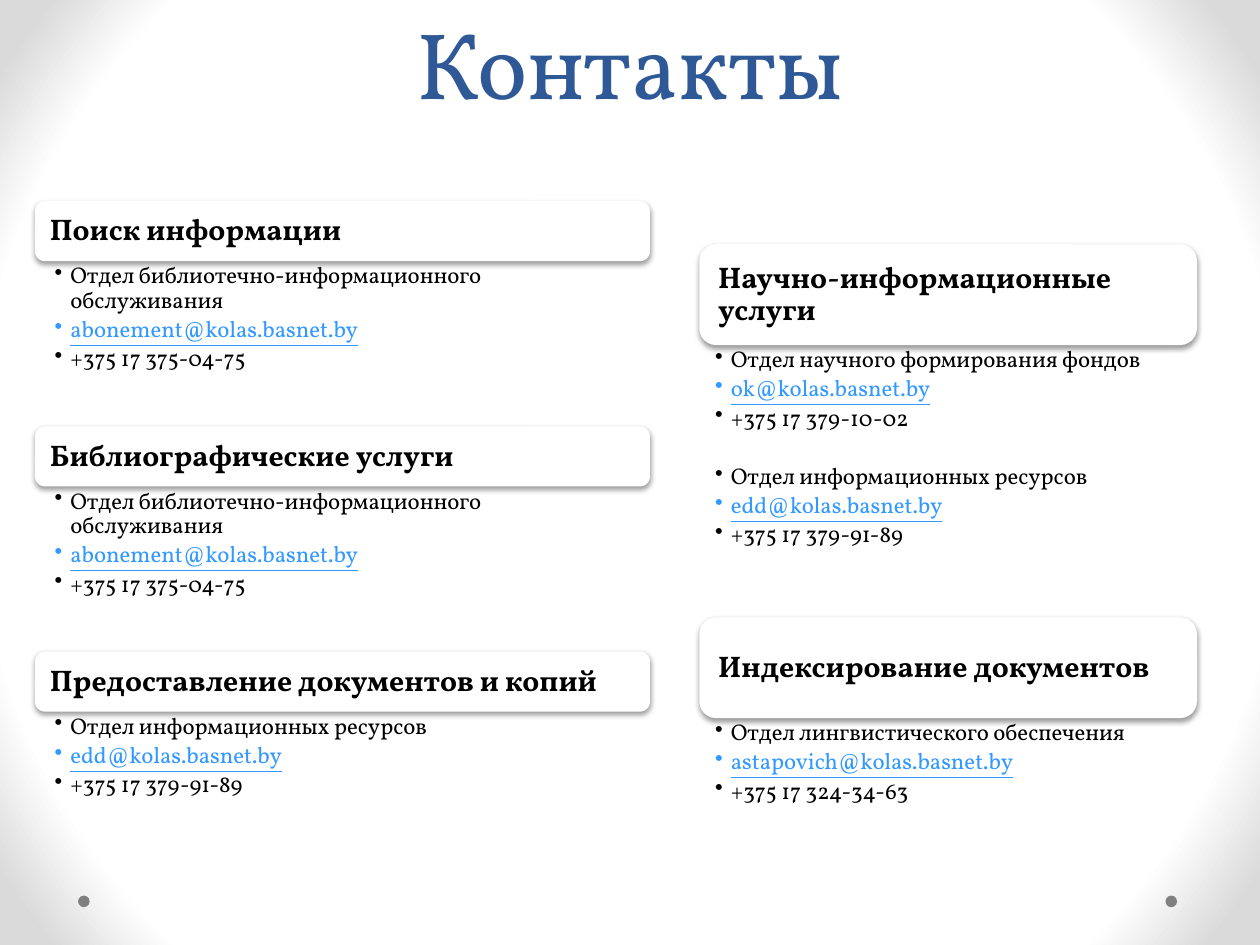
from lxml.etree import SubElement
from pptx import Presentation
from pptx.dml.color import RGBColor
from pptx.enum.shapes import MSO_SHAPE
from pptx.enum.text import MSO_ANCHOR, PP_ALIGN
from pptx.oxml import parse_xml
from pptx.oxml.ns import nsdecls, qn
from pptx.util import Pt

# Content: heading, then departments as (name, e-mail, phone)
TITLE = "Контакты"
LENDING = ("Отдел библиотечно-информационного обслуживания",
           "abonement@kolas.basnet.by", "+375 17 375-04-75")
RESOURCES = ("Отдел информационных ресурсов",
             "edd@kolas.basnet.by", "+375 17 379-91-89")
COLLECTIONS = ("Отдел научного формирования фондов",
               "ok@kolas.basnet.by", "+375 17 379-10-02")
LINGUISTICS = ("Отдел лингвистического обеспечения",
               "astapovich@kolas.basnet.by", "+375 17 324-34-63")

# Columns, lengths in points; each service has its list height
COLUMNS = [
    {"left": 20, "top": 115, "width": 351.4, "heading_height": 34.3,
     "heading_inset": 6.8, "list_inset": 11.2,
     "services": [("Поиск информации", [LENDING], 94.4),
                  ("Библиографические услуги", [LENDING], 94.4),
                  ("Предоставление документов и копий", [RESOURCES], 58)]},
    {"left": 399.6, "top": 139.6, "width": 284.4, "heading_height": 57.6,
     "heading_inset": 8, "list_inset": 9,
     "services": [("Научно-информационные услуги", [COLLECTIONS, RESOURCES], 155.6),
                  ("Индексирование документов", [LINGUISTICS], 58)]},
]

FONT = "Vollkorn"
NAVY = RGBColor(0x2F, 0x58, 0x97)
BLACK = RGBColor(0, 0, 0)
WHITE = RGBColor(0xFF, 0xFF, 0xFF)
LINK_BLUE = RGBColor(0x33, 0x99, 0xFF)
GRAY = RGBColor(0x80, 0x80, 0x80)
BACKGROUND_STOPS = [(69, "FFFFFF"), (83, "FFFFFF"), (95, "DADADA")]
DEPARTMENT_GAP = 16.7
INDENT = 9


def set_insets(frame, left, top, right, bottom):
    frame.margin_left, frame.margin_top = Pt(left), Pt(top)
    frame.margin_right, frame.margin_bottom = Pt(right), Pt(bottom)
    frame.word_wrap = True


def format_run(run, size, color, bold=False, underline=False):
    run.font.name = FONT
    run.font.size = Pt(size)
    run.font.color.rgb = color
    run.font.bold = bold
    run.font.underline = underline


def add_background(slide):
    stops = "".join(f'<a:gs pos="{pos * 1000}"><a:srgbClr val="{color}"/></a:gs>'
                    for pos, color in BACKGROUND_STOPS)
    slide.element.cSld.insert(0, parse_xml(
        f'<p:bg {nsdecls("p", "a")}><p:bgPr><a:gradFill rotWithShape="1">'
        f'<a:gsLst>{stops}</a:gsLst><a:path path="circle">'
        '<a:fillToRect l="50000" t="50000" r="50000" b="50000"/></a:path>'
        '</a:gradFill><a:effectLst/></p:bgPr></p:bg>'))


def add_plain_shape(slide, kind, left, top, width, height, color):
    shape = slide.shapes.add_shape(kind, Pt(left), Pt(top), Pt(width), Pt(height))
    shape.shadow.inherit = False
    shape.fill.solid()
    shape.fill.fore_color.rgb = color
    shape.line.fill.background()
    return shape


def add_heading(slide, text, left, top, width, height, inset):
    card = add_plain_shape(slide, MSO_SHAPE.ROUNDED_RECTANGLE,
                           left, top, width, height, WHITE)
    effects = card.element.spPr.find(qn("a:effectLst"))
    effects.append(parse_xml(
        f'<a:outerShdw {nsdecls("a")} blurRad="{Pt(3.1)}" dist="{Pt(1.6)}" '
        'dir="5400000" rotWithShape="0"><a:srgbClr val="000000">'
        '<a:alpha val="38000"/></a:srgbClr></a:outerShdw>'))
    frame = card.text_frame
    set_insets(frame, inset, 5, inset, 5)
    frame.vertical_anchor = MSO_ANCHOR.MIDDLE
    frame.text = text
    heading = frame.paragraphs[0]
    heading.alignment = PP_ALIGN.LEFT
    heading.line_spacing = 0.9
    format_run(heading.runs[0], 17, BLACK, bold=True)


def add_contacts(slide, departments, left, top, width, height, inset):
    box = slide.shapes.add_textbox(Pt(left), Pt(top), Pt(width), Pt(height))
    frame = box.text_frame
    set_insets(frame, inset, 1.7, 9, 1.7)
    lines = [line for department in departments for line in department]
    frame.text = "\n".join(lines)
    for number, entry in enumerate(frame.paragraphs):
        props = entry._p.get_or_add_pPr()
        props.set("marL", str(Pt(INDENT)))
        props.set("indent", str(-Pt(INDENT)))
        SubElement(props, qn("a:buChar")).set("char", "•")
        entry.level = 1
        entry.line_spacing = 0.9
        entry.space_after = Pt(2.6)
        if number and number % 3 == 0:
            entry.space_before = Pt(DEPARTMENT_GAP)
        is_email = number % 3 == 1
        format_run(entry.runs[0], 13, LINK_BLUE if is_email else BLACK,
                   underline=is_email)


def main():
    prs = Presentation()
    prs.slide_width, prs.slide_height = Pt(720), Pt(540)
    slide = prs.slides.add_slide(prs.slide_layouts[5])
    add_background(slide)

    # Corner dots
    for left in (666, 44.6):
        add_plain_shape(slide, MSO_SHAPE.OVAL, left, 511.8, 6.6, 6.6, GRAY)

    # Title
    title = slide.shapes.title
    title.left, title.top, title.width, title.height = Pt(36), Pt(0), Pt(648), Pt(71.3)
    title.text_frame.text = TITLE
    title.text_frame.vertical_anchor = MSO_ANCHOR.BOTTOM
    heading = title.text_frame.paragraphs[0]
    heading.alignment = PP_ALIGN.CENTER
    heading.line_spacing = Pt(58)
    format_run(heading.runs[0], 54, NAVY)

    # Columns of services, stacked from the top
    for column in COLUMNS:
        left, top, width = column["left"], column["top"], column["width"]
        for service, departments, list_height in column["services"]:
            add_heading(slide, service, left, top, width,
                        column["heading_height"], column["heading_inset"])
            top += column["heading_height"]
            add_contacts(slide, departments, left, top, width,
                         list_height, column["list_inset"])
            top += list_height

    prs.save("out.pptx")


if __name__ == "__main__":
    main()
